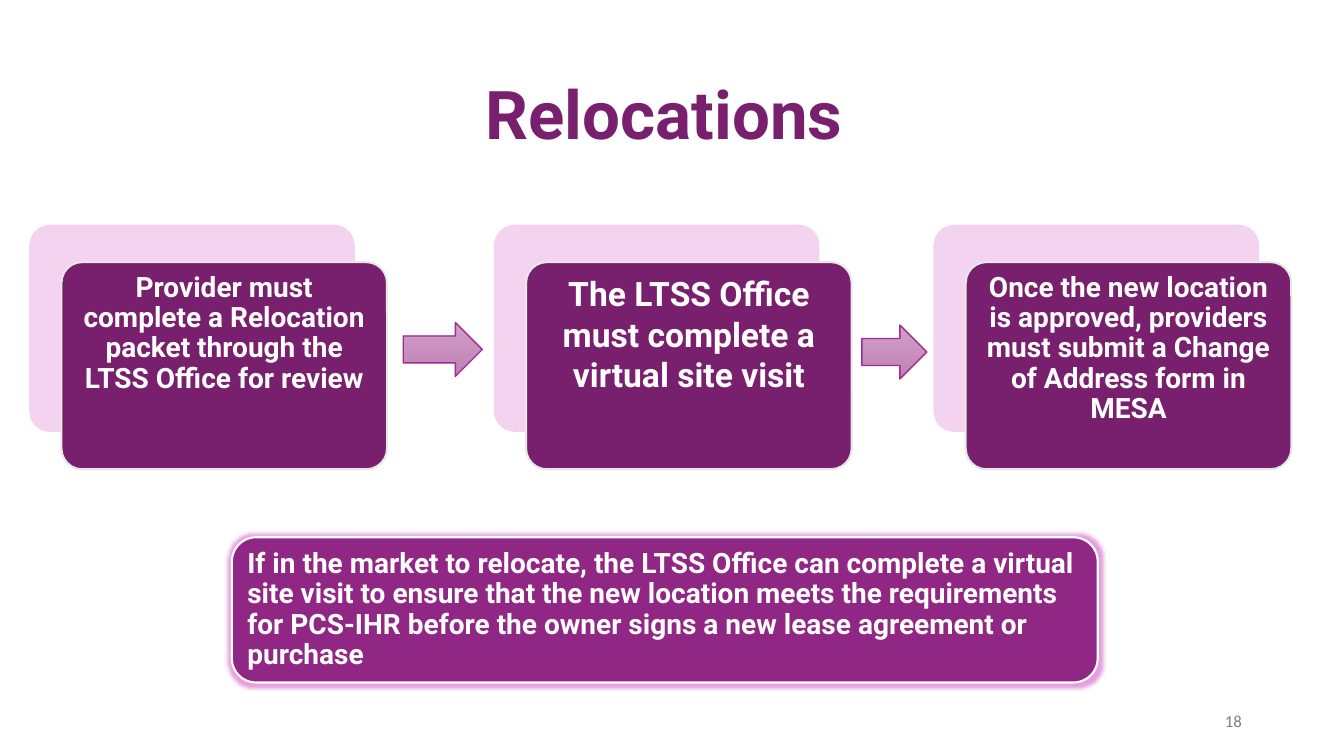
import pptx
import pptx.dml.color
import pptx.enum.shapes
import pptx.enum.text
import pptx.oxml
import pptx.oxml.ns
import pptx.util

Pt = pptx.util.Pt
SHAPE = pptx.enum.shapes.MSO_SHAPE
ALIGN = pptx.enum.text.PP_ALIGN
ANCHOR = pptx.enum.text.MSO_ANCHOR

COLORS = {
    "plum": "78206E", "banner": "912785", "backing": "F2CFEE",
    "card_line": "E8E8E8", "white": "FFFFFF", "number": "808080",
    "arrow_top": "D0A0C8", "arrow_bottom": "C17FB6", "arrow_line": "A02B93",
    "glow": "E59EDD",
}

CARD_W, CARD_H = 232.6, 148
CARD_TOP = 187.2
BACKING_DX, BACKING_DY = 23, 26.7

# Left edge, wording, text size, line spacing
STEPS = [
    (43.9, "Provider must complete a Relocation packet through the "
           "LTSS Office for review", 20, 0.9),
    (375.8, "The LTSS Office must complete a virtual site visit", 24, 1.0),
    (689.8, "Once the new location is approved, providers must submit "
            "a Change of Address form in MESA", 20, 0.9),
]
# Left, top, width
ARROWS = [(288, 230.4, 56.5), (615.6, 232.2, 46.4)]
ARROW_H = 38.5

BANNER = ("If in the market to relocate, the LTSS Office can complete a virtual "
          "site visit to ensure that the new location meets the requirements "
          "for PCS-IHR before the owner signs a new lease agreement or purchase")


def rgb(name):
    return pptx.dml.color.RGBColor.from_string(COLORS[name])


def set_text(sp, text, size, color, align, anchor, spacing=1.0,
             font="Roboto", bold=True, inset=None):
    tf = sp.text_frame
    tf.word_wrap = True
    tf.auto_size = pptx.enum.text.MSO_AUTO_SIZE.NONE
    tf.vertical_anchor = anchor
    if inset is not None:
        tf.margin_left = tf.margin_right = Pt(inset)
        tf.margin_top = tf.margin_bottom = Pt(inset)
    p = tf.paragraphs[0]
    p.alignment = align
    p.line_spacing = spacing
    p.space_before = Pt(0)
    r = p.add_run()
    r.text = text
    r.font.name = font
    r.font.size = Pt(size)
    r.font.bold = bold
    r.font.color.rgb = rgb(color)


def add_box(s, kind, left, top, width, height, fill=None, line=None, weight=1.5):
    sp = s.shapes.add_shape(kind, Pt(left), Pt(top), Pt(width), Pt(height))
    sp.shadow.inherit = False
    if fill:
        sp.fill.solid()
        sp.fill.fore_color.rgb = rgb(fill)
    if line:
        sp.line.color.rgb = rgb(line)
        sp.line.width = Pt(weight)
    else:
        sp.line.fill.background()
    return sp


def add_step(s, left, text, size, spacing):
    backing = add_box(s, SHAPE.ROUNDED_RECTANGLE, left - BACKING_DX,
                      CARD_TOP - BACKING_DY, CARD_W, CARD_H, "backing")
    backing.adjustments[0] = 0.1
    clr = backing.fill._xPr.find(".//" + pptx.oxml.ns.qn("a:srgbClr"))
    clr.append(pptx.oxml.parse_xml(
        f'<a:alpha {pptx.oxml.ns.nsdecls("a")} val="90000"/>'))
    card = add_box(s, SHAPE.ROUNDED_RECTANGLE, left, CARD_TOP,
                   CARD_W, CARD_H, "plum", "card_line")
    card.adjustments[0] = 0.1
    set_text(card, text, size, "white", ALIGN.CENTER, ANCHOR.TOP, spacing)


def add_arrow(s, left, top, width):
    sp = add_box(s, SHAPE.RIGHT_ARROW, left, top, width, ARROW_H,
                 line="arrow_line", weight=1)
    sp.fill.gradient()
    sp.fill.gradient_angle = 270
    for stop, name in zip(sp.fill.gradient_stops, ("arrow_top", "arrow_bottom")):
        stop.color.rgb = rgb(name)


def add_banner(s):
    sp = add_box(s, SHAPE.ROUNDED_RECTANGLE, 165.6, 383.8, 618.5, 103.7,
                 "banner", "white")
    set_text(sp, BANNER, 20, "white", ALIGN.LEFT, ANCHOR.MIDDLE, 0.9, inset=6)
    # Soft glow around the edge
    effects = sp._element.spPr.find(pptx.oxml.ns.qn("a:effectLst"))
    effects.append(pptx.oxml.parse_xml(
        f'<a:glow {pptx.oxml.ns.nsdecls("a")} rad="63500">'
        f'<a:srgbClr val="{COLORS["glow"]}"/></a:glow>'))


def main():
    prs = pptx.Presentation()
    prs.slide_width, prs.slide_height = Pt(960), Pt(540)
    s = prs.slides.add_slide(prs.slide_layouts[5])

    # Title
    title = s.shapes.title
    title.left, title.top = Pt(303.8), Pt(61.2)
    title.width, title.height = Pt(341.3), Pt(45.4)
    set_text(title, "Relocations", 48, "plum", ALIGN.CENTER, ANCHOR.MIDDLE,
             0.9, inset=8)

    # Process steps and the arrows between them
    for step in STEPS:
        add_step(s, *step)
    for arrow in ARROWS:
        add_arrow(s, *arrow)

    # Advice banner
    add_banner(s)

    # Slide number
    number = s.shapes.add_textbox(Pt(678.2), Pt(500.4), Pt(216), Pt(28.8))
    set_text(number, "18", 12, "number", ALIGN.RIGHT, ANCHOR.MIDDLE,
             font="Calibri", bold=False)

    prs.save("out.pptx")


if __name__ == "__main__":
    main()
